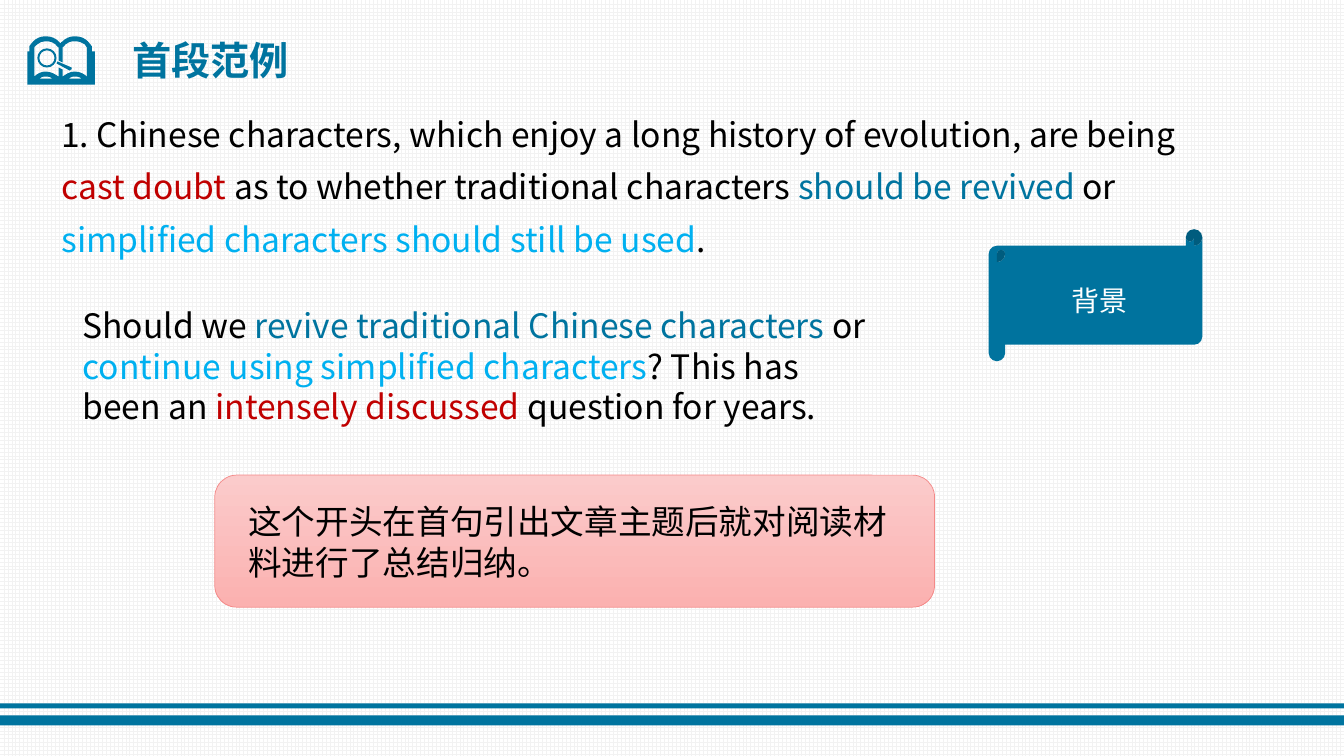
import collections

import lxml.etree
import pptx
import pptx.dml.color
import pptx.enum.dml
import pptx.enum.shapes
import pptx.enum.text
import pptx.oxml.ns
import pptx.util

RGBColor = pptx.dml.color.RGBColor
PRESETS = pptx.enum.shapes.MSO_SHAPE
MIDDLE = pptx.enum.text.MSO_ANCHOR.MIDDLE
CENTER = pptx.enum.text.PP_ALIGN.CENTER
GROW = pptx.enum.text.MSO_AUTO_SIZE.SHAPE_TO_FIT_TEXT

TEAL = RGBColor(0x00, 0x74, 0x9F)
SCROLL_TEAL = RGBColor(0x00, 0x73, 0x9E)
SKY = RGBColor(0x00, 0xB0, 0xF0)
RED = RGBColor(0xC0, 0x00, 0x00)
BLACK = RGBColor(0x00, 0x00, 0x00)
WHITE = RGBColor(0xFF, 0xFF, 0xFF)
GRID_GRAY = RGBColor(0xF2, 0xF2, 0xF2)
CARD_TOP = RGBColor(0xFB, 0xCB, 0xCB)
CARD_BOTTOM = RGBColor(0xFB, 0xB1, 0xB0)
CARD_EDGE = RGBColor(0xF4, 0x89, 0x88)

SLIDE_WIDTH = pptx.util.Inches(13.33)
SLIDE_HEIGHT = pptx.util.Inches(7.5)
SANS = "Noto Sans CJK SC"
ICON_COLUMNS, ICON_ROWS = 67, 48
ICON_FINENESS = 100

Box = collections.namedtuple("Box", "left top width height")

BOOK_OUTLINE = [
    (18, 0), (24, 0, 28, 2, 31, 5), (32, 6, 32, 6, 33, 7), (33, 6, 34, 6, 35, 5),
    (38, 2, 42, 0, 47, 0), (53, 0, 57, 2, 60, 5), (62, 7, 64, 10, 64, 10), (64, 15),
    (67, 15), (67, 48), (0, 48), (0, 15), (2, 15), (2, 10),
    (2, 10, 4, 7, 6, 5), (9, 2, 13, 0, 18, 0),
]
OPEN_PAGES = [
    (18, 5), (15, 5, 12, 6, 10, 8), (8, 9, 7, 11, 7, 11), (7, 40), (9, 38, 13, 35, 18, 35),
    (24, 35, 28, 38, 31, 40), (31, 31), (35, 33), (35, 40), (38, 38, 42, 35, 47, 35),
    (53, 35, 57, 38, 59, 40), (59, 11), (58, 10, 58, 9, 57, 8), (54, 6, 51, 5, 47, 5),
    (43, 5, 40, 6, 38, 8), (37, 9, 36, 11, 35, 11), (35, 26), (31, 24), (31, 11),
    (30, 11, 29, 9, 28, 8), (26, 6, 23, 5, 18, 5),
]
LENS_HANDLE = [(30, 25), (44, 31), (44, 31, 45, 34, 42, 34), (29, 27)]


def page_fold(left):
    """Return the contour of a page fold that starts at a column."""
    return [(left, 42), (left + 2, 40, left + 4, 40, left + 6, 40),
            (left + 9, 40, left + 11, 40, left + 13, 42)]


def lens_circle(radius):
    """Return the contour of a circle around the middle of the lens."""
    x, y, pull = 19.5, 21.5, radius * 0.55
    return [
        (x, y - radius),
        (x + pull, y - radius, x + radius, y - pull, x + radius, y),
        (x + radius, y + pull, x + pull, y + radius, x, y + radius),
        (x - pull, y + radius, x - radius, y + pull, x - radius, y),
        (x - radius, y - pull, x - pull, y - radius, x, y - radius),
    ]


def contour_points(contour):
    """List all points of a contour, with its curve controls, in fine units."""
    numbers = [round(number * ICON_FINENESS) for segment in contour for number in segment]
    return list(zip(numbers[::2], numbers[1::2]))


def bend_curves(shape, contours):
    """Join every three lines that stand for a curve into one cubic curve."""
    outline = shape._element.find(".//" + pptx.oxml.ns.qn("a:path"))
    commands = iter(list(outline))
    for contour in contours:
        next(commands)
        for segment in contour[1:]:
            line = next(commands)
            if len(segment) == 6:
                curve = outline.makeelement(pptx.oxml.ns.qn("a:cubicBezTo"))
                line.addprevious(curve)
                for control in (line, next(commands), next(commands)):
                    curve.append(control[0])
                    outline.remove(control)
        next(commands)


def share(left, top, width, height):
    """Return a box from percentages of the slide's size."""
    return Box(int(SLIDE_WIDTH * left / 100), int(SLIDE_HEIGHT * top / 100),
               int(SLIDE_WIDTH * width / 100), int(SLIDE_HEIGHT * height / 100))


def set_format(target, values):
    """Set each attribute of a target from a dict."""
    for name, value in values.items():
        setattr(target, name, value)


def paint(shape, color):
    """Give a shape a flat fill without line or shadow."""
    shape.shadow.inherit = False
    shape.fill.solid()
    shape.fill.fore_color.rgb = color
    shape.line.fill.background()


def write(shape, runs, size, font=SANS, bold=False, frame=None, **paragraph_format):
    """Write coloured runs as one wrapped paragraph."""
    set_format(shape.text_frame, {"word_wrap": True, **(frame or {})})
    paragraph = shape.text_frame.paragraphs[0]
    set_format(paragraph, paragraph_format)
    for text, color in runs:
        run = paragraph.add_run()
        run.text = text
        set_format(run.font, {"size": pptx.util.Pt(size), "name": font, "bold": bold})
        run.font.color.rgb = color
        east_asian = lxml.etree.SubElement(run._r.get_or_add_rPr(), pptx.oxml.ns.qn("a:ea"))
        east_asian.set("typeface", SANS)


def add_background(slide):
    """Fill the slide with a pale grid."""
    fill = slide.background.fill
    fill.patterned()
    fill.pattern = pptx.enum.dml.MSO_PATTERN.LARGE_GRID
    fill.fore_color.rgb = GRID_GRAY
    fill.back_color.rgb = WHITE


def add_footer(slide, box):
    """Draw a thin and a thick band in the box."""
    for top, height in ((0, 0.23), (0.55, 0.45)):
        band = slide.shapes.add_shape(
            PRESETS.RECTANGLE, box.left, box.top + int(box.height * top),
            box.width, int(box.height * height))
        paint(band, TEAL)


def add_book_icon(slide, box):
    """Draw an open book with a magnifying lens."""
    scale = (box.width / ICON_COLUMNS / ICON_FINENESS, box.height / ICON_ROWS / ICON_FINENESS)
    contours = [BOOK_OUTLINE, OPEN_PAGES, lens_circle(9.5), lens_circle(7.5),
                LENS_HANDLE, page_fold(12), page_fold(41)]
    first, *others = [contour_points(contour) for contour in contours]
    builder = slide.shapes.build_freeform(*first[0], scale=scale)
    builder.add_line_segments(first[1:])
    for points in others:
        builder.move_to(*points[0])
        builder.add_line_segments(points[1:])
    icon = builder.convert_to_shape(box.left, box.top)
    bend_curves(icon, contours)
    paint(icon, TEAL)


def add_title(slide, box):
    """Write the slide title."""
    write(slide.shapes.add_textbox(*box), [("首段范例", TEAL)], 28, "Times New Roman",
          True, {"vertical_anchor": MIDDLE}, space_before=pptx.util.Pt(10))


def add_passage(slide, box, runs, **paragraph_format):
    """Write a sample opening with highlighted phrases."""
    write(slide.shapes.add_textbox(*box), runs, 24, frame={"auto_size": GROW},
          **paragraph_format)


def add_scroll(slide, box):
    """Draw the scroll that labels the background part."""
    scroll = slide.shapes.add_shape(PRESETS.HORIZONTAL_SCROLL, *box)
    paint(scroll, SCROLL_TEAL)
    write(scroll, [("背景", WHITE)], 20, frame={"vertical_anchor": MIDDLE},
          alignment=CENTER, line_spacing=1.3)


def add_comment_card(slide, box):
    """Draw the pink card and its remark."""
    card = slide.shapes.add_shape(PRESETS.ROUNDED_RECTANGLE, *box)
    card.shadow.inherit = False
    card.fill.gradient()
    card.fill.gradient_angle = 270
    for stop, color in zip(card.fill.gradient_stops, (CARD_TOP, CARD_BOTTOM)):
        stop.color.rgb = color
    card.line.color.rgb = CARD_EDGE
    card.line.width = pptx.util.Pt(0.5)
    inset_x, inset_y = int(box.width * 0.033), int(box.height * 0.16)
    remark = slide.shapes.add_textbox(box.left + inset_x, box.top + inset_y,
                                      box.width - 2 * inset_x, box.height - 2 * inset_y)
    write(remark, [("这个开头在首句引出文章主题后就对阅读材料进行了总结归纳。", BLACK)], 24, "Arial",
          frame={"auto_size": GROW})


def main():
    """Build the slide and save it."""
    presentation = pptx.Presentation()
    set_format(presentation, {"slide_width": SLIDE_WIDTH, "slide_height": SLIDE_HEIGHT})
    slide = presentation.slides.add_slide(presentation.slide_layouts[6])
    add_background(slide)
    add_footer(slide, share(0, 93.03, 100, 2.93))
    add_book_icon(slide, share(2.03, 4.8, 5.03, 6.4))
    add_comment_card(slide, share(15.98, 62.85, 53.56, 17.47))
    add_title(slide, share(9.1, 3.2, 52.81, 9.47))
    add_passage(slide, share(3.83, 12.8, 84.47, 21.73), [
        ("1. Chinese characters, which enjoy a long history of evolution, are being ", BLACK),
        ("cast doubt ", RED), ("as to whether traditional characters ", BLACK),
        ("should be revived ", TEAL), ("or ", BLACK),
        ("simplified characters should still be used", SKY), (".", BLACK),
    ], line_spacing=1.3, space_before=pptx.util.Pt(6))
    add_passage(slide, share(5.4, 39.73, 60.17, 17.47), [
        ("Should we ", BLACK), ("revive traditional Chinese characters ", TEAL), ("or ", BLACK),
        ("continue using simplified characters", SKY), ("? This has been an ", BLACK),
        ("intensely discussed ", RED), ("question for years.", BLACK),
    ])
    add_scroll(slide, share(73.56, 30.32, 15.9, 17.47))
    presentation.save("out.pptx")


if __name__ == "__main__":
    main()
